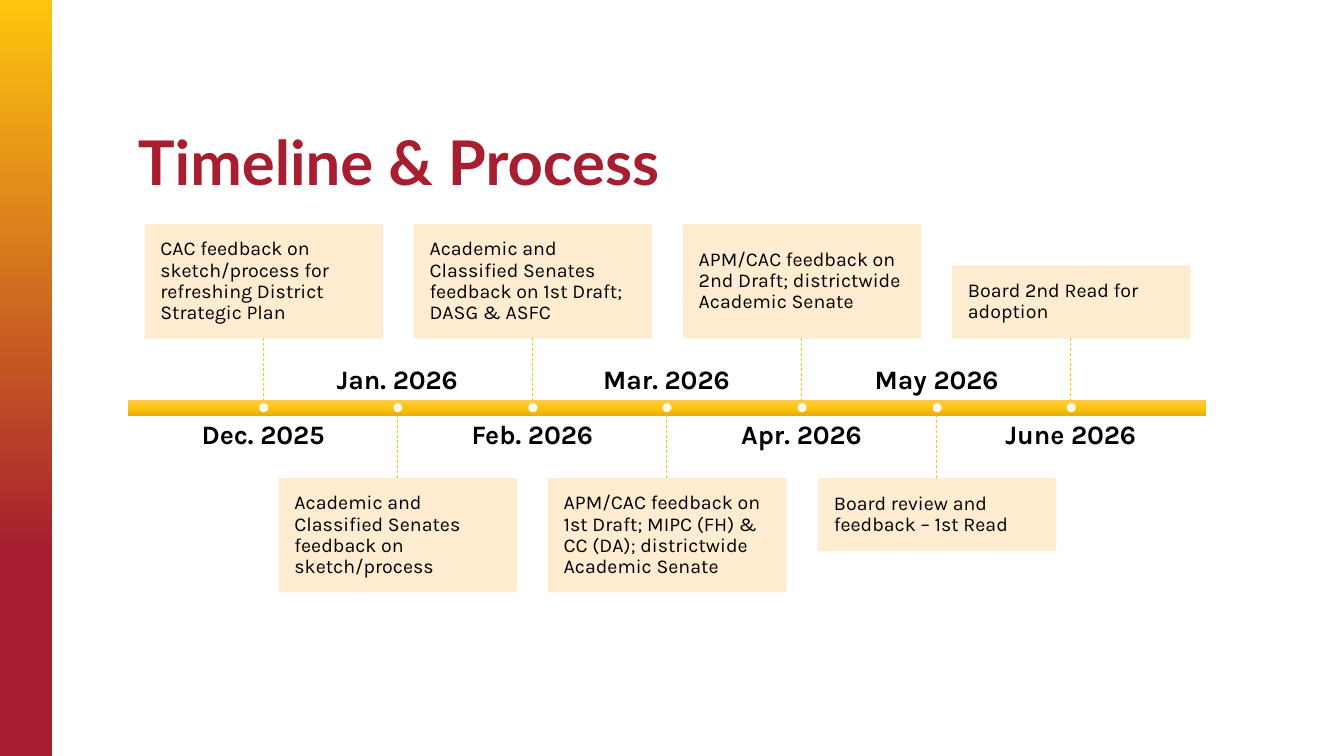
from dataclasses import dataclass

from pptx import Presentation
from pptx.dml.color import RGBColor
from pptx.enum.dml import MSO_LINE
from pptx.enum.shapes import MSO_CONNECTOR, MSO_SHAPE
from pptx.enum.text import MSO_ANCHOR as Anchor, PP_ALIGN as Align
from pptx.oxml import parse_xml
from pptx.oxml.ns import nsdecls, qn
from pptx.oxml.xmlchemy import OxmlElement
from pptx.util import Pt

EMU_PER_PX = 9144  # 100 px to the inch


@dataclass(frozen=True)
class Theme:
    red: str = "A61E2F"
    gold: str = "FFC50E"
    gold_light: str = "FFCA4C"
    gold_dark: str = "E5B00A"
    cream: str = "FFEACC"
    white: str = "FFFFFF"
    black: str = "000000"
    title_font: str = "Lato"
    body_font: str = "Karla"
    title_size: int = 44
    date_size: int = 19
    note_size: int = 14


@dataclass(frozen=True)
class Box:
    x: int
    y: int
    w: int
    h: int


@dataclass(frozen=True)
class Milestone:
    date: str
    note: str
    note_h: int = 112


T = Theme()
BAR = Box(127, 397, 1069, 15)
NOTE_W, DATE_W, DATE_H, DOT = 235, 214, 42, 9
UPPER_END, LOWER_START = 335, 475  # note edges that face the bar

MILESTONES = [
    Milestone("Dec. 2025", "CAC feedback on sketch/process for refreshing District Strategic Plan"),
    Milestone("Jan. 2026", "Academic and Classified Senates feedback on sketch/process"),
    Milestone("Feb. 2026", "Academic and Classified Senates feedback on 1st Draft; DASG & ASFC"),
    Milestone("Mar. 2026", "APM/CAC feedback on 1st Draft; MIPC (FH) & CC (DA); districtwide Academic Senate"),
    Milestone("Apr. 2026", "APM/CAC feedback on 2nd Draft; districtwide Academic Senate"),
    Milestone("May 2026", "Board review and feedback – 1st Read", 71),
    Milestone("June 2026", "Board 2nd Read for adoption", 71),
]


def px(n: int) -> int:
    return n * EMU_PER_PX


def emu(b: Box) -> tuple:
    return px(b.x), px(b.y), px(b.w), px(b.h)


def add_shape(s, kind, b: Box):
    sp = s.shapes.add_shape(kind, *emu(b))
    sp.shadow.inherit = False
    sp.line.fill.background()
    return sp


def add_gradient(s, b: Box, stops: list, angle: int) -> None:
    sp = add_shape(s, MSO_SHAPE.RECTANGLE, b)
    gs = "".join(f'<a:gs pos="{pos * 1000}"><a:srgbClr val="{color}"/></a:gs>' for pos, color in stops)
    sp._element.spPr.insert(2, parse_xml(
        f'<a:gradFill {nsdecls("a")} rotWithShape="1"><a:gsLst>{gs}</a:gsLst>'
        f'<a:lin ang="{angle * 60000}" scaled="0"/></a:gradFill>'))


def add_tint(s, kind, b: Box, color: str, outlined: bool = False):
    """Shape in one colour at 90% opacity."""
    sp = add_shape(s, kind, b)
    sp.fill.solid()
    sp.fill.fore_color.rgb = RGBColor.from_string(color)
    if outlined:
        sp.line.color.rgb = RGBColor.from_string(color)
        sp.line.width = Pt(1)
    for clr in sp._element.spPr.iter(qn("a:srgbClr")):
        alpha = OxmlElement("a:alpha")
        alpha.set("val", "90000")
        clr.append(alpha)
    return sp


def set_text(sp, text: str, size: int, font: str, color: str, bold: bool,
             anchor: Anchor, align: Align, inset_x: int, inset_y: int) -> None:
    tf = sp.text_frame
    tf.word_wrap = True
    tf.vertical_anchor = anchor
    tf.margin_left = tf.margin_right = px(inset_x)
    tf.margin_top = tf.margin_bottom = px(inset_y)
    p = tf.paragraphs[0]
    p.text = text
    p.alignment = align
    p.line_spacing = 0.9
    p.font.size = Pt(size)
    p.font.name = font
    p.font.bold = bold
    p.font.color.rgb = RGBColor.from_string(color)


def add_stem(s, x: int, y1: int, y2: int) -> None:
    ln = s.shapes.add_connector(MSO_CONNECTOR.STRAIGHT, px(x), px(y1), px(x), px(y2))
    ln.line.color.rgb = RGBColor.from_string(T.gold)
    ln.line.width = Pt(0.5)
    ln.line.dash_style = MSO_LINE.DASH
    ln._element.spPr.append(OxmlElement("a:effectLst"))


def add_milestone(s, m: Milestone, x: int, note_above: bool) -> None:
    bar_end = BAR.y + BAR.h
    if note_above:
        note_y, date_y, anchor = UPPER_END - m.note_h, 418, Anchor.TOP
        stem = UPPER_END, BAR.y
    else:
        note_y, date_y, anchor = LOWER_START, 350, Anchor.BOTTOM
        stem = bar_end, LOWER_START

    date = s.shapes.add_textbox(*emu(Box(x - DATE_W // 2, date_y, DATE_W, DATE_H)))
    set_text(date, m.date, T.date_size, T.body_font, T.black, True, anchor, Align.CENTER, 0, 0)

    note = add_tint(s, MSO_SHAPE.RECTANGLE, Box(x - NOTE_W // 2, note_y, NOTE_W, m.note_h), T.cream, True)
    set_text(note, m.note, T.note_size, T.body_font, T.black, False, Anchor.MIDDLE, Align.LEFT, 15, 15)

    add_stem(s, x, *stem)
    add_tint(s, MSO_SHAPE.OVAL, Box(x - DOT // 2, BAR.y + (BAR.h - DOT) // 2, DOT, DOT), T.white)


def main() -> None:
    prs = Presentation()
    prs.slide_width, prs.slide_height = px(1333), px(750)
    s = prs.slides.add_slide(prs.slide_layouts[6])

    # Side band and title
    add_gradient(s, Box(0, 0, 52, 750), [(27, T.red), (100, T.gold)], 270)
    title = s.shapes.add_textbox(*emu(Box(127, 11, 1069, 191)))
    set_text(title, "Timeline & Process", T.title_size, T.title_font, T.red, True,
             Anchor.BOTTOM, Align.LEFT, 10, 5)

    # Timeline: milestones divide the bar evenly, notes alternate above and below
    add_gradient(s, BAR, [(0, T.gold_light), (50, T.gold), (100, T.gold_dark)], 90)
    for i, m in enumerate(MILESTONES):
        x = BAR.x + round(BAR.w * (i + 1) / (len(MILESTONES) + 1))
        add_milestone(s, m, x, note_above=i % 2 == 0)

    prs.save("out.pptx")


if __name__ == "__main__":
    main()
